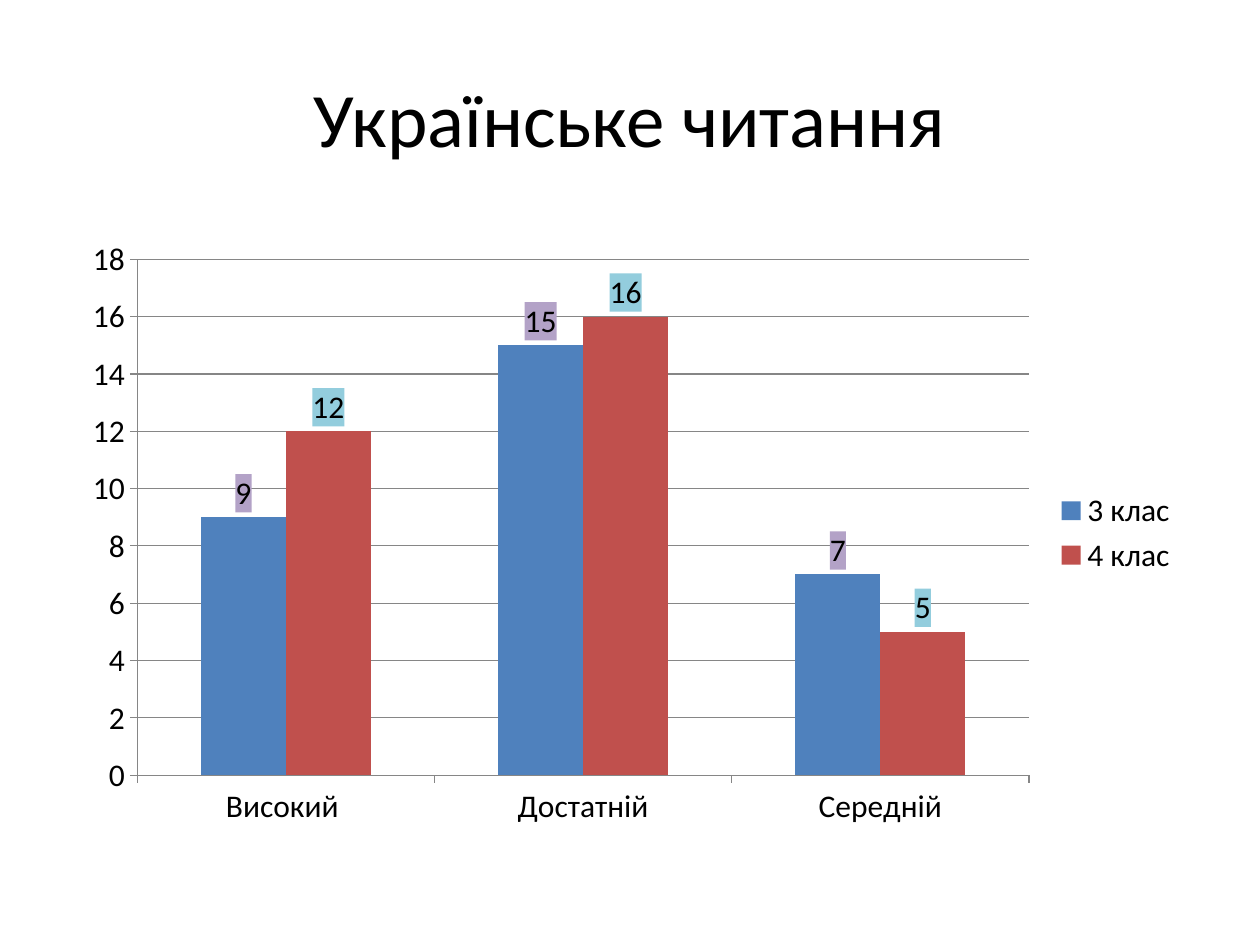
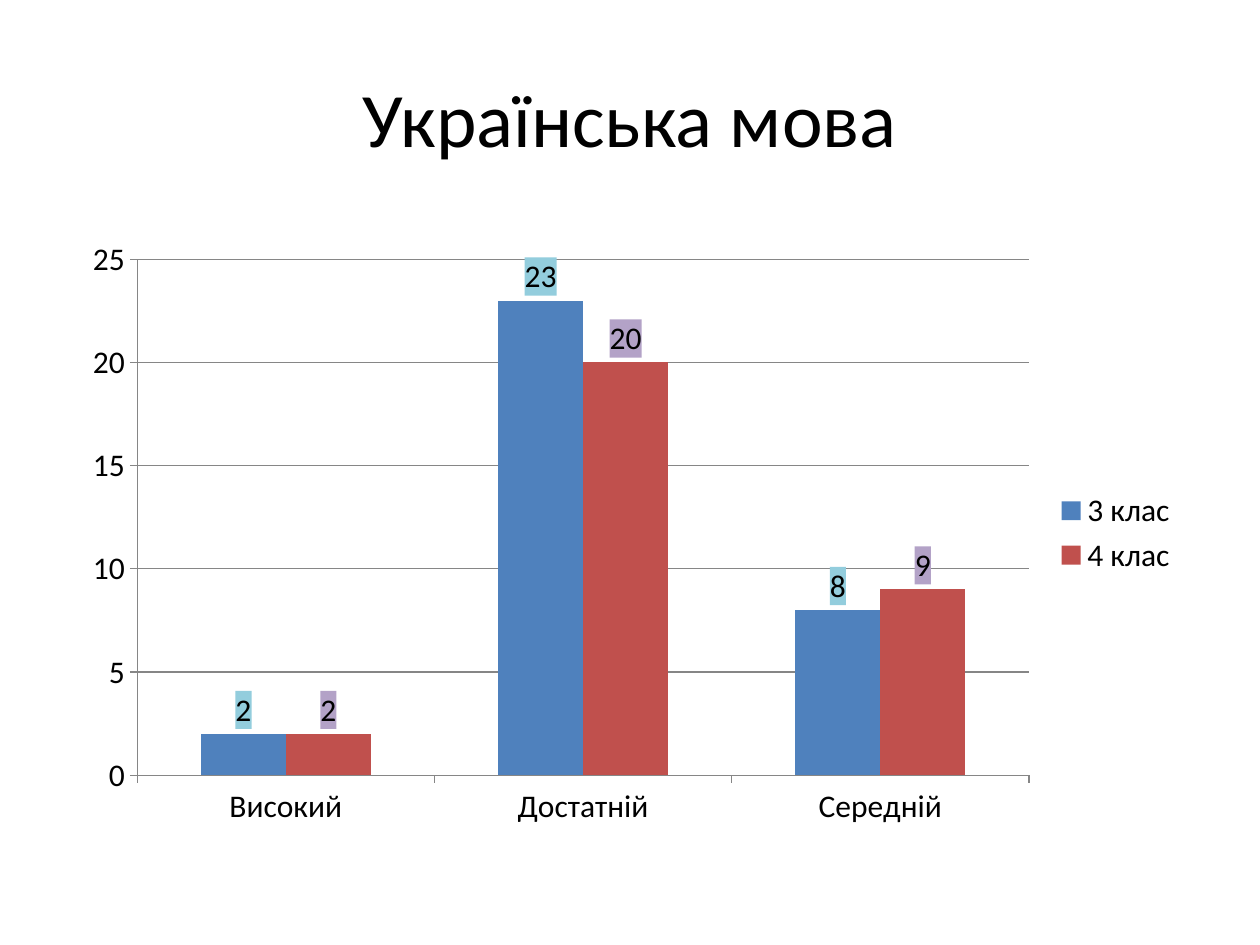
"""Builds two slides that compare class results in clustered column charts."""
from lxml import etree
from pptx import Presentation
from pptx import util as u
from pptx.chart import data as chart_data
from pptx.dml.color import RGBColor
from pptx.enum import chart as c
from pptx.enum import text
from pptx.oxml import ns

BLACK = RGBColor(0x00, 0x00, 0x00)
GRAY = RGBColor(0x86, 0x86, 0x86)
BLUE = RGBColor(0x4F, 0x81, 0xBD)
RED = RGBColor(0xC0, 0x50, 0x4D)
LILAC = RGBColor(0xB3, 0xA2, 0xC7)
AQUA = RGBColor(0x93, 0xCD, 0xDD)
FONT = "Calibri"
CLASSES = (("3 клас", BLUE), ("4 клас", RED))


class Deck:
    def __init__(self):
        self.presentation = Presentation()
        self.presentation.slide_width = u.Pt(720)
        self.presentation.slide_height = u.Pt(540)
        self.slide = None

    def style_font(self, font, size):
        font.name = FONT
        font.size = u.Pt(size)
        font.bold = False
        font.color.rgb = BLACK

    def style_line(self, line):
        line.color.rgb = GRAY
        line.width = u.Pt(0.75)

    def add_slide(self, title):
        layout = self.presentation.slide_layouts[5]
        self.slide = self.presentation.slides.add_slide(layout)
        shape = self.slide.shapes.title
        shape.left, shape.top = u.Pt(36), u.Pt(21.6)
        shape.width, shape.height = u.Pt(648), u.Pt(90)
        shape.text_frame.vertical_anchor = text.MSO_ANCHOR.MIDDLE
        paragraph = shape.text_frame.paragraphs[0]
        paragraph.alignment = text.PP_ALIGN.CENTER
        run = paragraph.add_run()
        run.text = title
        self.style_font(run.font, 44)

    def add_chart(self, levels, results, label_fills, maximum, step):
        data = chart_data.CategoryChartData()
        data.categories = levels
        for (name, _), values in zip(CLASSES, results):
            data.add_series(name, values)
        chart = self.slide.shapes.add_chart(
            c.XL_CHART_TYPE.COLUMN_CLUSTERED,
            u.Pt(40.3), u.Pt(130.3), u.Pt(640), u.Pt(348.5), data).chart
        self.style_font(chart.font, 18)
        chart.has_title = False
        chart.has_legend = True
        chart.legend.position = c.XL_LEGEND_POSITION.RIGHT
        chart.legend.include_in_layout = False

        for axis in (chart.category_axis, chart.value_axis):
            axis.major_tick_mark = c.XL_TICK_MARK.OUTSIDE
            axis.minor_tick_mark = c.XL_TICK_MARK.NONE
            self.style_line(axis.format.line)
        axis = chart.value_axis
        axis.minimum_scale, axis.maximum_scale = 0, maximum
        axis.major_unit = step
        axis.has_major_gridlines = True
        self.style_line(axis.major_gridlines.format.line)

        plot = chart.plots[0]
        plot.gap_width, plot.overlap = 150, 0
        plot.vary_by_categories = False
        for series, (_, color), fill in zip(plot.series, CLASSES, label_fills):
            series.format.fill.solid()
            series.format.fill.fore_color.rgb = color
            self.add_labels(series, fill)

    def add_labels(self, series, fill):
        labels = series.data_labels
        labels.show_value = True
        labels.position = c.XL_LABEL_POSITION.OUTSIDE_END
        self.style_font(labels.font, 18)
        properties = etree.Element(ns.qn("c:spPr"))
        solid = etree.SubElement(properties, ns.qn("a:solidFill"))
        etree.SubElement(solid, ns.qn("a:srgbClr"), val=str(fill))
        labels._element.find(ns.qn("c:txPr")).addprevious(properties)


def main():
    deck = Deck()
    deck.add_slide("Українське читання")
    deck.add_chart(("Високий ", "Достатній", "Середній"),
                   ((9, 15, 7), (12, 16, 5)), (LILAC, AQUA), 18, 2)
    deck.add_slide("Українська мова")
    deck.add_chart(("Високий", "Достатній", "Середній"),
                   ((2, 23, 8), (2, 20, 9)), (AQUA, LILAC), 25, 5)
    deck.presentation.save("out.pptx")


if __name__ == "__main__":
    main()
